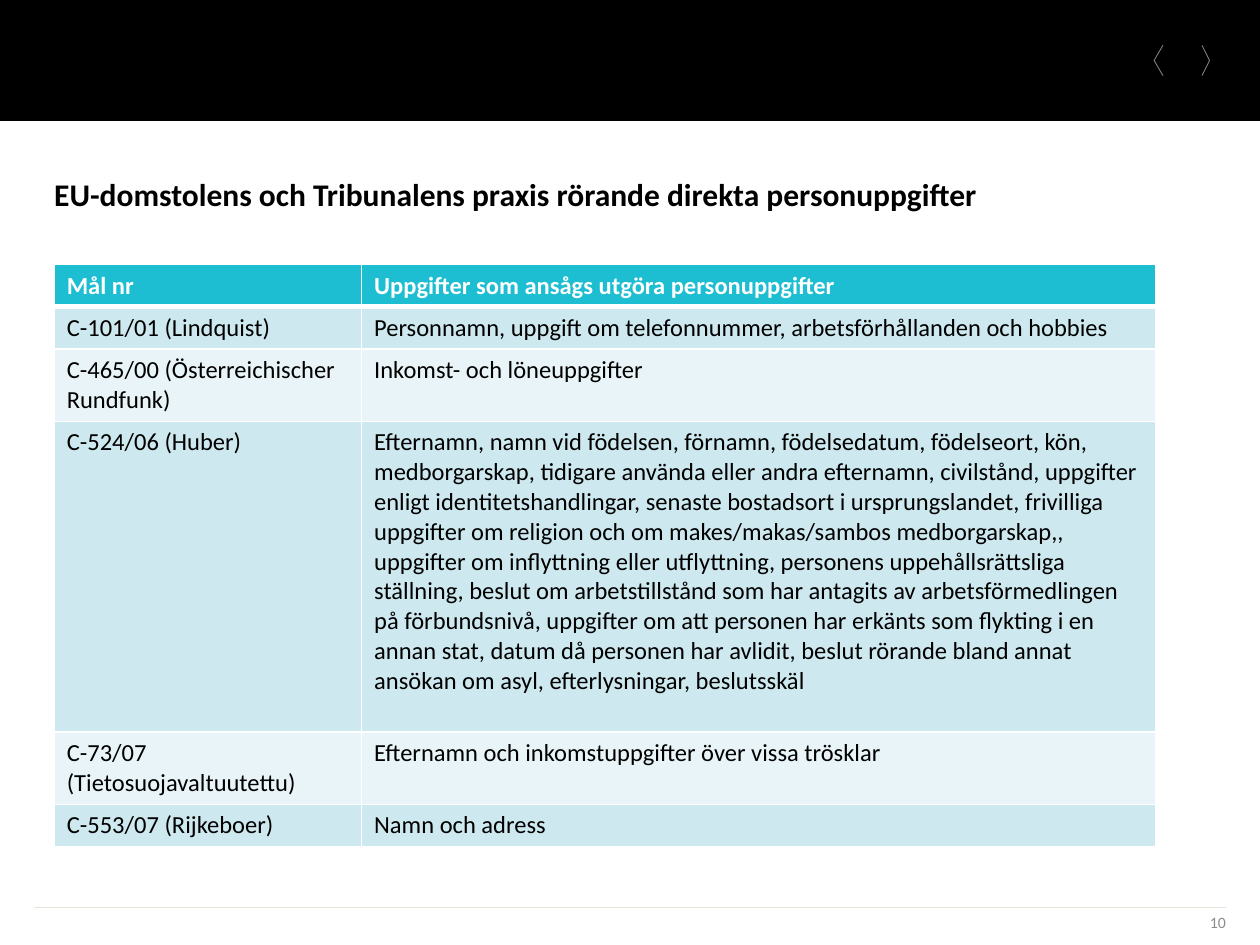
"""Build a slide listing EU case law on direct personal data."""
from lxml.etree import SubElement
from pptx import Presentation
from pptx.dml.color import RGBColor
from pptx.enum.shapes import MSO_CONNECTOR, MSO_SHAPE
from pptx.enum.text import MSO_ANCHOR, PP_ALIGN
from pptx.oxml import parse_xml
from pptx.oxml.ns import nsdecls, qn
from pptx.util import Inches, Pt

SLIDE_WIDTH = Inches(10)
SLIDE_HEIGHT = Inches(7.5)


def share(percent):
    """Return a percentage of the slide's width as a length."""
    return round(SLIDE_WIDTH * percent / 100)


def style(paragraph, size, color, bold=False):
    """Set the font of a whole paragraph."""
    paragraph.font.name = "Calibri"
    paragraph.font.size = Pt(size)
    paragraph.font.bold = bold
    paragraph.font.color.rgb = RGBColor.from_string(color)


LEFT = share(4.3)
MARGIN = share(2.7)
FOOTER_TOP = share(72)
CASES = [
    ("Mål nr", "Uppgifter som ansågs utgöra personuppgifter", 3.3),
    ("C-101/01 (Lindquist)", "Personnamn, uppgift om telefonnummer, arbetsförhållanden och hobbies", 3.35),
    ("C-465/00 (Österreichischer Rundfunk)", "Inkomst- och löneuppgifter", 5.75),
    ("C-524/06 (Huber)",
     "Efternamn, namn vid födelsen, förnamn, födelsedatum, födelseort, kön, medborgarskap, "
     "tidigare använda eller andra efternamn, civilstånd, uppgifter enligt identitetshandlingar, "
     "senaste bostadsort i ursprungslandet, frivilliga uppgifter om religion och om "
     "makes/makas/sambos medborgarskap,, uppgifter om inflyttning eller utflyttning, personens "
     "uppehållsrättsliga ställning, beslut om arbetstillstånd som har antagits av "
     "arbetsförmedlingen på förbundsnivå, uppgifter om att personen har erkänts som flykting i en "
     "annan stat, datum då personen har avlidit, beslut rörande bland annat ansökan om asyl, "
     "efterlysningar, beslutsskäl", 24.65),
    ("C-73/07 (Tietosuojavaltuutettu)", "Efternamn och inkomstuppgifter över vissa trösklar", 5.75),
    ("C-553/07 (Rijkeboer)", "Namn och adress", 3.35),
]

presentation = Presentation()
presentation.slide_width = SLIDE_WIDTH
presentation.slide_height = SLIDE_HEIGHT
slide = presentation.slides.add_slide(presentation.slide_layouts[5])
shapes = slide.shapes

band = shapes.add_shape(MSO_SHAPE.RECTANGLE, 0, 0, SLIDE_WIDTH, share(9.6))
band.shadow.inherit = False
band.fill.solid()
band.fill.fore_color.rgb = RGBColor.from_string("000000")
band.line.fill.background()

for tip, ends in ((91.6, 92.3), (96, 95.4)):
    outline = shapes.build_freeform(share(ends), share(3.6))
    outline.add_line_segments([(share(tip), share(4.8)), (share(ends), share(6))], close=False)
    chevron = outline.convert_to_shape()
    chevron.shadow.inherit = False
    chevron.fill.background()
    chevron.line.color.rgb = RGBColor.from_string("808080")
    chevron.line.width = Pt(0.5)

footer_rule = shapes.add_connector(
    MSO_CONNECTOR.STRAIGHT, MARGIN, FOOTER_TOP, SLIDE_WIDTH - MARGIN, FOOTER_TOP)
footer_rule.line.color.rgb = RGBColor.from_string("E9E4DB")
footer_rule.line.width = Pt(0.25)
SubElement(footer_rule._element.spPr, qn("a:effectLst"))

heading = shapes.title
heading.left, heading.top, heading.width, heading.height = LEFT, share(13.9), share(93.7), share(4.7)
page_number = shapes.add_textbox(share(71.7), FOOTER_TOP, share(25.6), share(2.4))
for holder, words, anchor, alignment, size, color, bold in (
    (heading, "EU-domstolens och Tribunalens praxis rörande direkta personuppgifter",
     MSO_ANCHOR.TOP, PP_ALIGN.LEFT, 18, "000000", True),
    (page_number, "10", MSO_ANCHOR.MIDDLE, PP_ALIGN.RIGHT, 9, "8C8C8C", False),
):
    frame = holder.text_frame
    frame.text = words
    frame.word_wrap = True
    frame.vertical_anchor = anchor
    frame.margin_left = frame.margin_top = frame.margin_right = frame.margin_bottom = 0
    frame.paragraphs[0].alignment = alignment
    style(frame.paragraphs[0], size, color, bold)

case_table = shapes.add_table(len(CASES), 2, LEFT, share(21), share(87.4), share(46.15)).table
case_table.columns[0].width = share(24.4)
case_table.columns[1].width = share(63)
for row, (case, details, height) in enumerate(CASES):
    case_table.rows[row].height = share(height)
    is_header = row == 0
    fill = "1EBED2" if is_header else ("E8F4F7", "CDE8EE")[row % 2]
    for column, words in enumerate((case, details)):
        cell = case_table.cell(row, column)
        cell.text = words
        cell.fill.solid()
        cell.fill.fore_color.rgb = RGBColor.from_string(fill)
        style(cell.text_frame.paragraphs[0], 14, "FFFFFF" if is_header else "000000", is_header)
        for position, side in enumerate(("L", "R", "T", "B")):
            thick = (is_header and side == "B") or (row == 1 and side == "T")
            border = parse_xml(
                f'<a:ln{side} {nsdecls("a")} w="{Pt(3 if thick else 1)}"><a:solidFill>'
                f'<a:srgbClr val="FFFFFF"/></a:solidFill></a:ln{side}>')
            cell._tc.get_or_add_tcPr().insert(position, border)

presentation.save("out.pptx")
